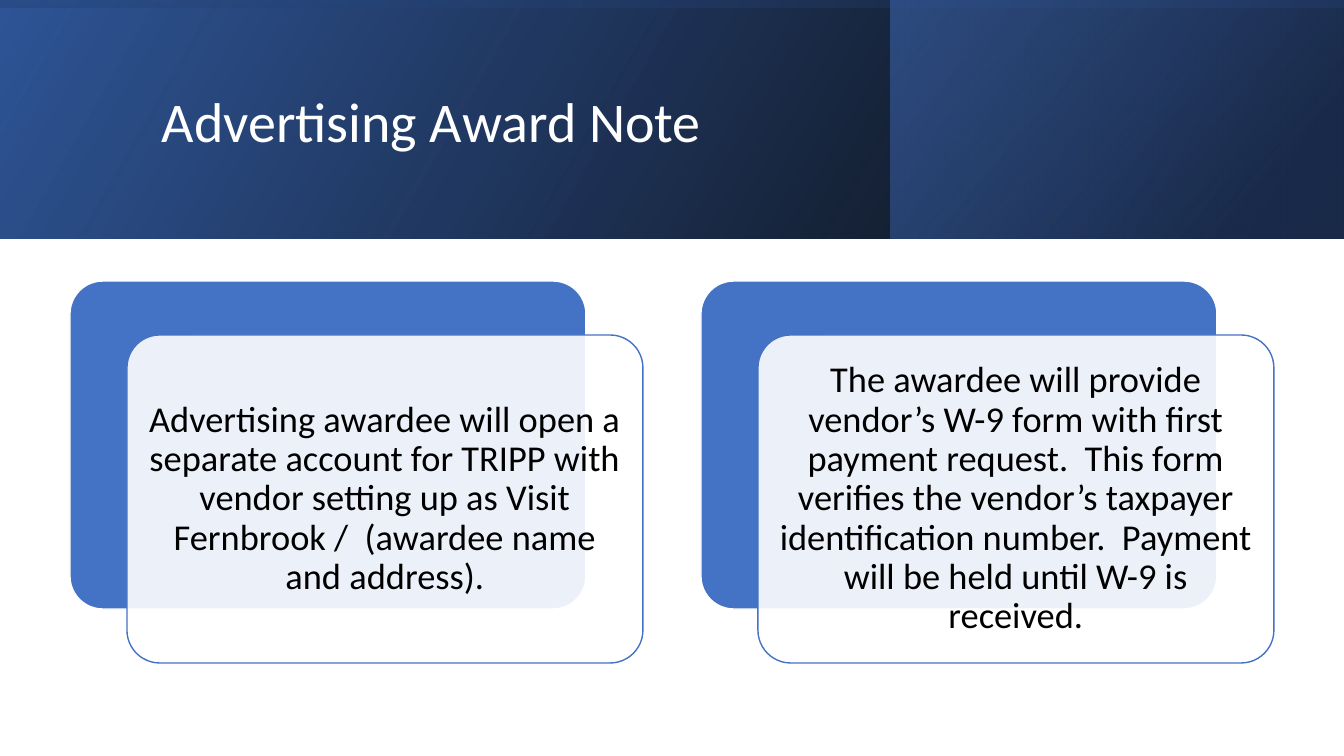
from lxml import etree
from pptx import Presentation
from pptx import util as u
from pptx.dml.color import RGBColor
from pptx.enum import shapes, text
from pptx.oxml.ns import qn

PX = 914400 / 100.8
BLUE, NAVY, DEEP = "4472C4", "203864", "2F5597"
WHITE, BLACK = "FFFFFF", "000000"


def px(length):
    return u.Emu(round(length * PX))


def rgb(value):
    return RGBColor.from_string(value)


class AwardSlide:
    """Holds the style and the current slide, and draws its elements."""

    font = "Calibri"

    def __init__(self, deck):
        self.slide = deck.slides.add_slide(deck.slide_layouts[6])

    def shape(self, kind, box):
        shape = self.slide.shapes.add_shape(kind, *map(px, box))
        shape.shadow.inherit = False
        return shape

    def set_alphas(self, shape, alphas):
        colours = shape._element.spPr.iter(qn("a:srgbClr"))
        for colour, alpha in zip(colours, alphas):
            etree.SubElement(colour, qn("a:alpha")).set("val", str(alpha * 1000))

    def band(self, box, stops, angle, rotation=0):
        band = self.shape(shapes.MSO_SHAPE.RECTANGLE, box)
        band.rotation = rotation
        band._element.spPr.find(qn("a:xfrm")).set("flipH", "1")
        band.line.fill.background()
        band.fill.gradient()
        band.fill.gradient_angle = 360 - angle
        for stop, (position, colour, _) in zip(band.fill.gradient_stops, stops):
            stop.position = position / 100
            stop.color.rgb = rgb(colour)
        self.set_alphas(band, [alpha for _, _, alpha in stops])

    def panel(self, box, fill, line, alpha=100):
        panel = self.shape(shapes.MSO_SHAPE.ROUNDED_RECTANGLE, box)
        panel.adjustments[0] = 0.1
        panel.fill.solid()
        panel.fill.fore_color.rgb = rgb(fill)
        if alpha < 100:
            self.set_alphas(panel, [alpha])
        panel.line.color.rgb = rgb(line)
        panel.line.width = u.Pt(1)
        return panel

    def wording(self, frame, words, size, colour, align):
        frame.word_wrap = True
        frame.vertical_anchor = text.MSO_ANCHOR.MIDDLE
        paragraph = frame.paragraphs[0]
        paragraph.text = words
        paragraph.alignment = align
        paragraph.line_spacing = 0.9
        paragraph.font.name = self.font
        paragraph.font.size = u.Pt(size)
        paragraph.font.color.rgb = rgb(colour)

    def title(self, box, words):
        title = self.slide.shapes.add_textbox(*map(px, box))
        self.wording(title.text_frame, words, 40, WHITE, text.PP_ALIGN.LEFT)

    def card(self, left, top, words):
        width, height = 516, 328
        self.panel((left, top, width, height), BLUE, WHITE)
        front = self.panel((left + 57, top + 54, width, height), WHITE, BLUE, 90)
        frame = front.text_frame
        frame.margin_left = frame.margin_right = px(11)
        frame.margin_top = frame.margin_bottom = px(11)
        self.wording(frame, words, 26, BLACK, text.PP_ALIGN.CENTER)


def main():
    deck = Presentation()
    deck.slide_width, deck.slide_height = px(1344), px(756)
    award = AwardSlide(deck)

    award.band((0, 0, 1344, 239), [(0, BLACK, 96), (100, DEEP, 100)], 330)
    award.band((891, 0, 452, 239), [(19, NAVY, 68), (100, BLUE, 48)], 320)
    award.band((552, -552, 239, 1344), [(23, DEEP, 16), (99, BLACK, 45)], 350, 270)
    award.title((152, 38, 1072, 173), "Advertising Award Note")

    notes = [
        "Advertising awardee will open a separate account for TRIPP with vendor "
        "setting up as Visit Fernbrook /  (awardee name and address).",
        "The awardee will provide vendor’s W-9 form with first payment request.  "
        "This form verifies the vendor’s taxpayer identification number.  "
        "Payment will be held until W-9 is received.",
    ]
    for column, note in enumerate(notes):
        award.card(70 + column * 631, 281, note)

    deck.save("out.pptx")


if __name__ == "__main__":
    main()
